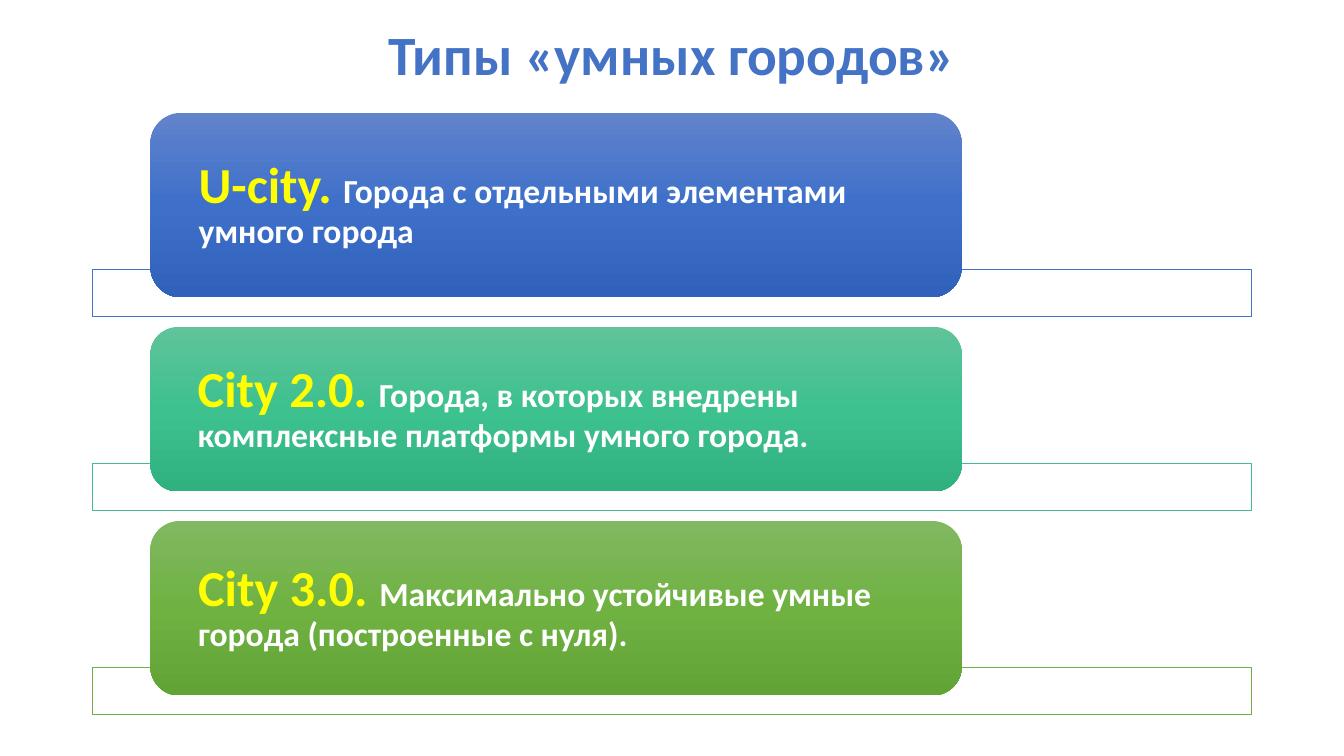
from copy import deepcopy
from dataclasses import dataclass

from lxml.etree import SubElement
from pptx import Presentation
from pptx.dml.color import RGBColor
from pptx.enum.shapes import MSO_SHAPE
from pptx.enum.text import MSO_ANCHOR, PP_ALIGN
from pptx.oxml.ns import qn
from pptx.util import Pt

RECT, ROUND = MSO_SHAPE.RECTANGLE, MSO_SHAPE.ROUNDED_RECTANGLE
MIDDLE = MSO_ANCHOR.MIDDLE
LEFT, CENTER = PP_ALIGN.LEFT, PP_ALIGN.CENTER


@dataclass(frozen=True)
class Theme:
    """Colours, font and type sizes of the slide."""
    font: str = "Calibri"
    blue: str = "4472C4"
    white: str = "FFFFFF"
    yellow: str = "FFFF00"
    title: float = 39.6
    name: float = 36
    body: float = 24


THEME = Theme()
CITIES = [
    ("U-city. ", "Города с отдельными элементами умного города",
     131.8, THEME.blue, ("6183CB", "3E70CA", "3062BB")),
    ("City 2.0. ", "Города, в которых внедрены комплексные платформы умного города.",
     117.4, "43BB8D", ("60C39A", "3DC18F", "31B080")),
    ("City 3.0. ", "Максимально устойчивые умные города (построенные с нуля).",
     124.6, "70AD47", ("81B861", "6FB242", "62A336")),
]


def rgb(code):
    """Turn a hex code into a colour."""
    return RGBColor.from_string(code)


def write(frame, runs, align, inset):
    """Write bold runs of (text, size, colour) as one paragraph."""
    look = {"word_wrap": True, "vertical_anchor": MIDDLE, "margin_left": inset,
            "margin_right": inset, "margin_top": 0, "margin_bottom": 0}
    for key, value in look.items():
        setattr(frame, key, value)
    para = frame.paragraphs[0]
    para.alignment, para.line_spacing = align, 0.9
    for text, size, code in runs:
        run = para.add_run()
        run.text = text
        for key, value in {"name": THEME.font, "size": Pt(size), "bold": True}.items():
            setattr(run.font, key, value)
        run.font.color.rgb = rgb(code)
    return para


def add_title(slide, left, top, width, height):
    """Place the heading with its thin white outline."""
    box = slide.shapes.add_textbox(Pt(left), Pt(top), Pt(width), Pt(height))
    runs = [("Типы «умных городов»", THEME.title, THEME.blue)]
    para = write(box.text_frame, runs, CENTER, Pt(7.2))
    props = para.runs[0].font._element
    line = SubElement(props, qn("a:ln"), w=str(Pt(0.75)))
    fill = SubElement(line, qn("a:solidFill"))
    SubElement(fill, qn("a:srgbClr"), val=THEME.white)
    props.insert(0, line)


def add_bar(slide, left, top, width, height, code):
    """Place the outlined strip behind a card."""
    bar = slide.shapes.add_shape(RECT, Pt(left), Pt(top), Pt(width), Pt(height))
    bar.shadow.inherit = False
    bar.fill.solid()
    bar.fill.fore_color.rgb = rgb(THEME.white)
    tint = bar._element.spPr.find(qn("a:solidFill"))[0]
    SubElement(tint, qn("a:alpha"), val="90000")
    bar.line.color.rgb = rgb(code)
    bar.line.width = Pt(0.5)


def add_card(slide, left, top, width, height, shades, runs):
    """Place a rounded card with a gradient and its text."""
    card = slide.shapes.add_shape(ROUND, Pt(left), Pt(top), Pt(width), Pt(height))
    card.shadow.inherit = False
    card.line.fill.background()
    card.fill.gradient()
    card.fill.gradient_angle = 270
    stops = card._element.spPr.find(qn("a:gradFill")).find(qn("a:gsLst"))
    stops.append(deepcopy(stops[0]))
    for spot, (stop, code) in enumerate(zip(card.fill.gradient_stops, shades)):
        stop.position = spot / 2
        stop.color.rgb = rgb(code)
    write(card.text_frame, runs, LEFT, Pt(28))


def add_list(slide, left, top, width):
    """Stack the city types, each a card over a strip."""
    gap, lap, strip = 21.2, 20.2, 34
    for name, text, height, code, shades in CITIES:
        add_bar(slide, left, top + height - lap, width, strip, code)
        runs = [(name, THEME.name, THEME.yellow), (text, THEME.body, THEME.white)]
        add_card(slide, left + width * 0.05, top, width * 0.7, height, shades, runs)
        top += height + gap


def main():
    """Build and save the slide."""
    deck = Presentation()
    deck.slide_width, deck.slide_height = Pt(960), Pt(540)
    slide = deck.slides.add_slide(deck.slide_layouts[6])
    add_title(slide, 66, 28.8, 828, 24.5)
    add_list(slide, 66, 80.6, 828)
    deck.save("out.pptx")


if __name__ == "__main__":
    main()
